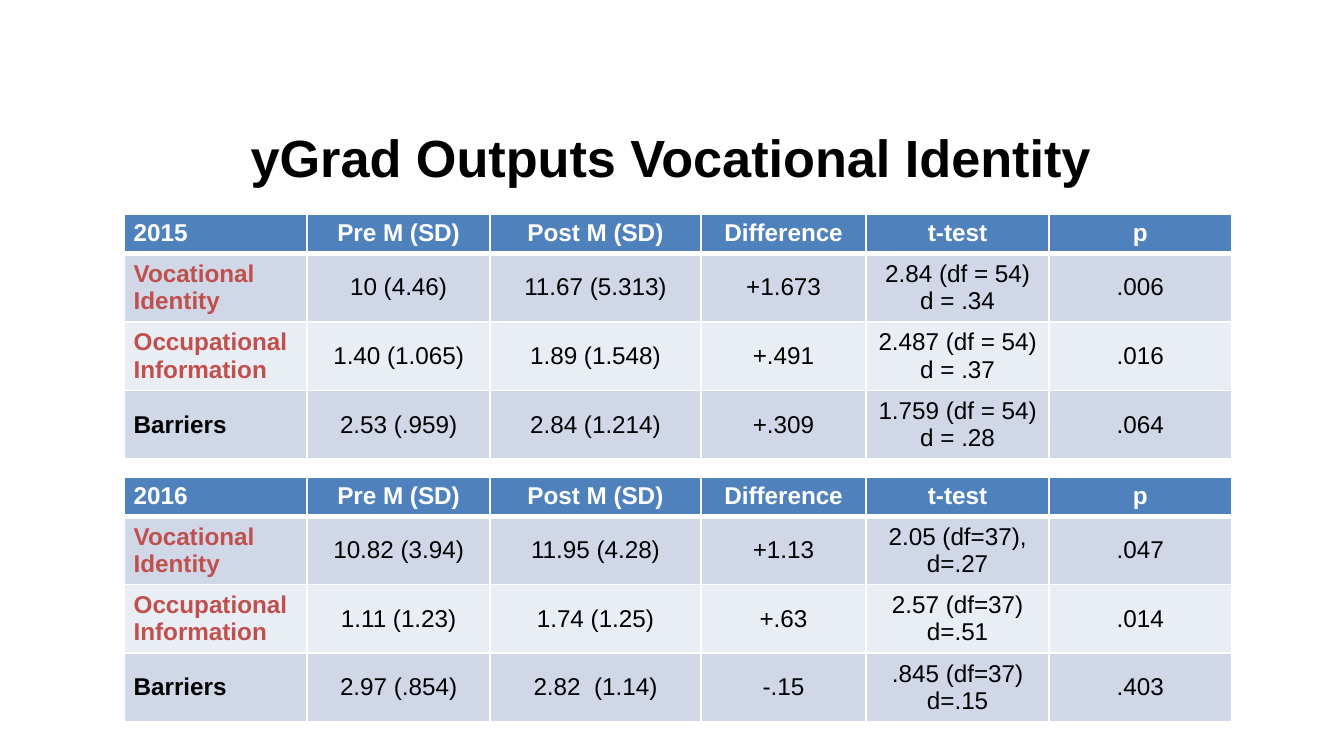
from lxml.etree import SubElement
from pptx import Presentation
from pptx.dml.color import RGBColor
from pptx.enum.text import MSO_ANCHOR, PP_ALIGN
from pptx.oxml.ns import qn
from pptx.util import Pt

PX = 4572
FONT = "Arial"
BLACK, WHITE, RED = "000000", "FFFFFF", "C0504D"
HEADER_FILL = "4F81BD"
BAND_FILLS = ["D0D8E8", "E9EDF4"]

TITLE = "yGrad Outputs Vocational Identity"
MEASURES = ["Pre M (SD)", "Post M (SD)", "Difference", "t-test", "p"]
HIGHLIGHTED = ["Vocational Identity", "Occupational Information"]
RESULTS = {
    "2015": [
        ["Vocational Identity", "10 (4.46)", "11.67 (5.313)", "+1.673", "2.84 (df = 54)\vd = .34", ".006"],
        ["Occupational Information", "1.40 (1.065)", "1.89 (1.548)", "+.491", "2.487 (df = 54)\vd = .37", ".016"],
        ["Barriers", "2.53 (.959)", "2.84 (1.214)", "+.309", "1.759 (df = 54)\vd = .28", ".064"],
    ],
    "2016": [
        ["Vocational Identity", "10.82 (3.94)", "11.95 (4.28)", "+1.13", "2.05 (df=37), d=.27", ".047"],
        ["Occupational Information", "1.11 (1.23)", "1.74 (1.25)", "+.63", "2.57 (df=37)\vd=.51", ".014"],
        ["Barriers", "2.97 (.854)", "2.82  (1.14)", "-.15", ".845 (df=37)\nd=.15", ".403"],
    ],
}

SLIDE_SIZE = (2000, 1125)
TITLE_BOX = (254, 139, 1488, 188)
TABLE_LEFT, TABLE_TOP, TABLE_STEP = 185, 319, 391
COLUMN_WIDTHS = [272, 272, 314, 246, 272, 272]
ROW_HEIGHTS = [58, 102, 102, 102]


def px(*lengths):
    return [length * PX for length in lengths]


def color(value):
    return RGBColor.from_string(value)


def format_text(text_frame, size, text_color, bold, alignment):
    for paragraph in text_frame.paragraphs:
        paragraph.alignment = alignment
        paragraph.font.name = FONT
        paragraph.font.size = Pt(size)
        paragraph.font.bold = bold
        paragraph.font.color.rgb = color(text_color)


def set_borders(cell, **widths):
    properties = cell._tc.get_or_add_tcPr()
    for position, (tag, width) in enumerate(widths.items()):
        line = SubElement(properties, qn(f"a:{tag}"), w=str(Pt(width)))
        fill = SubElement(line, qn("a:solidFill"))
        SubElement(fill, qn("a:srgbClr"), val=WHITE)
        properties.insert(position, line)


def format_cell(cell, text, row, column):
    is_header, is_label = row == 0, column == 0
    cell.text = text
    cell.margin_left, cell.margin_right, cell.margin_top, cell.margin_bottom = px(14, 14, 8, 8)
    cell.vertical_anchor = MSO_ANCHOR.TOP if is_header else MSO_ANCHOR.MIDDLE
    cell.fill.solid()
    cell.fill.fore_color.rgb = color(HEADER_FILL if is_header else BAND_FILLS[(row - 1) % 2])
    set_borders(cell, lnL=1, lnR=1, lnT=3 if row == 1 else 1, lnB=3 if is_header else 1)
    text_color = WHITE if is_header else RED if text in HIGHLIGHTED else BLACK
    alignment = PP_ALIGN.LEFT if is_label else PP_ALIGN.CENTER
    format_text(cell.text_frame, 13, text_color, is_header or is_label, alignment)


def add_results_table(slide, top, rows):
    box = px(TABLE_LEFT, top, sum(COLUMN_WIDTHS), sum(ROW_HEIGHTS))
    table = slide.shapes.add_table(len(rows), len(COLUMN_WIDTHS), *box).table
    for column, width in zip(table.columns, px(*COLUMN_WIDTHS)):
        column.width = width
    for row, height in zip(table.rows, px(*ROW_HEIGHTS)):
        row.height = height
    for row, texts in enumerate(rows):
        for column, text in enumerate(texts):
            format_cell(table.cell(row, column), text, row, column)


def main():
    presentation = Presentation()
    presentation.slide_width, presentation.slide_height = px(*SLIDE_SIZE)
    slide = presentation.slides.add_slide(presentation.slide_layouts[5])

    title = slide.shapes.title
    title.left, title.top, title.width, title.height = px(*TITLE_BOX)
    title.text_frame.text = TITLE
    title.text_frame.vertical_anchor = MSO_ANCHOR.MIDDLE
    format_text(title.text_frame, 28, BLACK, True, PP_ALIGN.CENTER)

    for index, (year, results) in enumerate(RESULTS.items()):
        add_results_table(slide, TABLE_TOP + index * TABLE_STEP, [[year, *MEASURES], *results])

    presentation.save("out.pptx")


if __name__ == "__main__":
    main()
